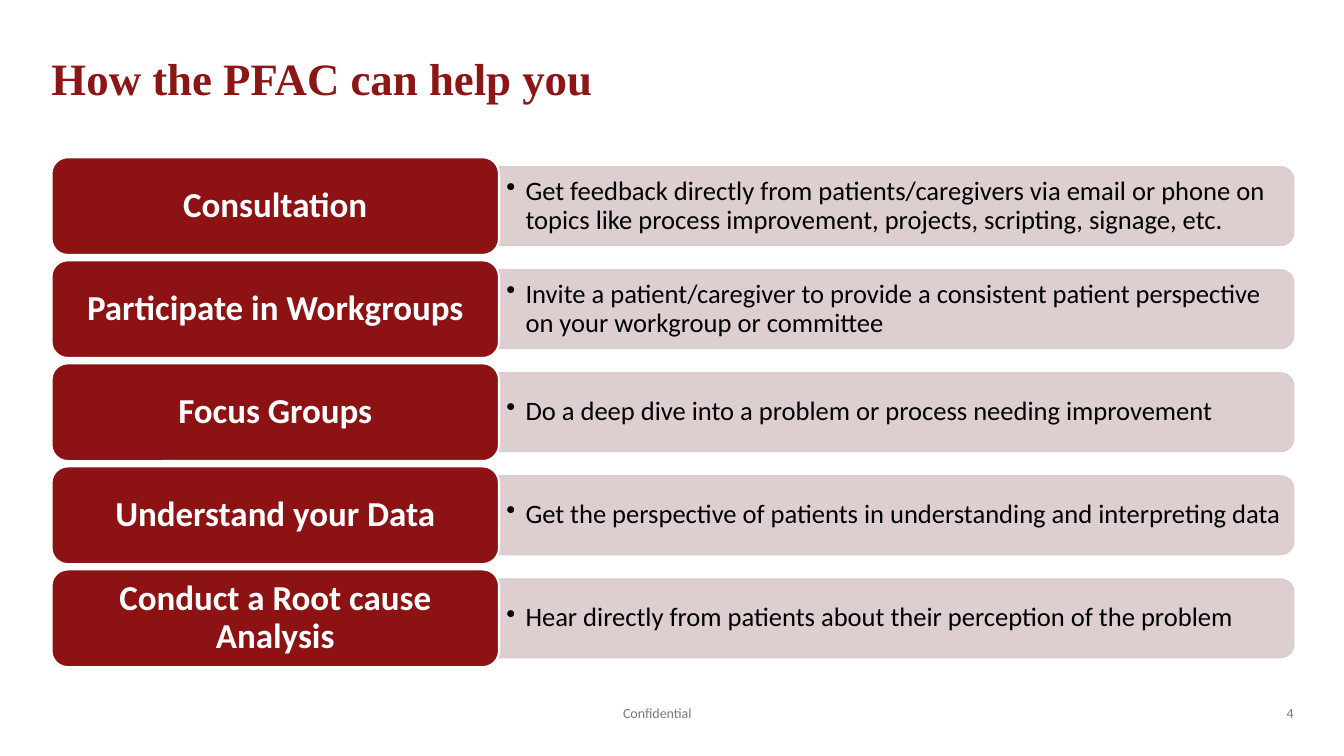
"""Build the slide that lists five ways the PFAC can help."""
from dataclasses import dataclass

import lxml.etree
import pptx
import pptx.dml.color
import pptx.dml.fill
import pptx.enum.shapes
import pptx.enum.text
import pptx.oxml.ns
import pptx.presentation
import pptx.shapes.autoshape
import pptx.slide
import pptx.text.text
import pptx.util

SLIDE_WIDTH = pptx.util.Inches(13.33)
SLIDE_HEIGHT = pptx.util.Inches(7.5)
COLOURS = {
    "title": "8C1515",
    "label": "8C1213",
    "bar": "DACACA",
    "white": "FFFFFF",
    "black": "000000",
    "footer": "7F7776",
}
ALIGN = pptx.enum.text.PP_ALIGN
ANCHOR = pptx.enum.text.MSO_ANCHOR
SHAPE = pptx.enum.shapes.MSO_SHAPE
CORNER = 0.167


@dataclass(frozen=True)
class Area:
    """A rectangle in percent of the slide's width and height."""

    left: float
    top: float
    width: float
    height: float

    def lengths(self) -> tuple[int, int, int, int]:
        """Return left, top, width and height in EMU."""
        return (
            round(SLIDE_WIDTH * self.left / 100),
            round(SLIDE_HEIGHT * self.top / 100),
            round(SLIDE_WIDTH * self.width / 100),
            round(SLIDE_HEIGHT * self.height / 100),
        )


@dataclass(frozen=True)
class Style:
    """The look of one kind of text."""

    size: float
    colour: str
    align: pptx.enum.text.PP_ALIGN
    anchor: pptx.enum.text.MSO_ANCHOR
    insets: tuple[float, float, float, float] = (0, 0, 0, 0)
    font: str = "Calibri"
    bold: bool = False
    spacing: float = 1.0


@dataclass(frozen=True)
class Service:
    """One row: a label and its explanation."""

    label: str
    detail: str


@dataclass(frozen=True)
class Footer:
    """A small text at the foot of the slide."""

    text: str
    area: Area
    align: pptx.enum.text.PP_ALIGN


SERVICES = [
    Service("Consultation", "Get feedback directly from patients/caregivers via email or phone on "
            "topics like process improvement, projects, scripting, signage, etc."),
    Service("Participate in Workgroups", "Invite a patient/caregiver to provide a consistent "
            "patient perspective on your workgroup or committee"),
    Service("Focus Groups", "Do a deep dive into a problem or process needing improvement"),
    Service("Understand your Data",
            "Get the perspective of patients in understanding and interpreting data"),
    Service("Conduct a Root cause Analysis",
            "Hear directly from patients about their perception of the problem"),
]
FOOTERS = [
    Footer("4", Area(93.1, 92.5, 3.15, 2.85), ALIGN.RIGHT),
    Footer("Confidential", Area(33.16, 92.5, 31.5, 2.9), ALIGN.CENTER),
]
TITLE_AREA = Area(3.83, 6, 92.42, 14.8)
ROW_TOP, ROW_PITCH, LABEL_HEIGHT, BAR_HEIGHT = 20.8, 13.63, 12.93, 10.4
LABEL_LEFT, LABEL_WIDTH = 3.83, 33.3
BAR_LEFT, BAR_WIDTH, DETAIL_WIDTH = 37.08, 59.18, 58.88

TITLE_STYLE = Style(32, "title", ALIGN.LEFT, ANCHOR.TOP, (0, 0.05, 1.5, 0),
                    font="Times New Roman", bold=True)
LABEL_STYLE = Style(25, "white", ALIGN.CENTER, ANCHOR.MIDDLE, (0.1, 0.05, 0.1, 0.05),
                    bold=True, spacing=0.9)
DETAIL_STYLE = Style(19, "black", ALIGN.LEFT, ANCHOR.MIDDLE, (0.08, 0.04, 0.08, 0.04),
                     spacing=0.9)


def colour(name: str) -> pptx.dml.color.RGBColor:
    """Look up a named colour."""
    return pptx.dml.color.RGBColor.from_string(COLOURS[name])


def write(frame: pptx.text.text.TextFrame, text: str, style: Style) -> pptx.text.text._Paragraph:
    """Write one styled paragraph into a text frame."""
    frame.word_wrap = True
    frame.auto_size = pptx.enum.text.MSO_AUTO_SIZE.NONE
    frame.vertical_anchor = style.anchor
    (frame.margin_left, frame.margin_top, frame.margin_right, frame.margin_bottom) = (
        pptx.util.Inches(inset) for inset in style.insets)
    para = frame.paragraphs[0]
    para.alignment = style.align
    para.line_spacing = style.spacing
    span = para.add_run()
    span.text = text
    span.font.name = style.font
    span.font.size = pptx.util.Pt(style.size)
    span.font.bold = style.bold
    span.font.color.rgb = colour(style.colour)
    return para


def add_bullet(para: pptx.text.text._Paragraph) -> None:
    """Give a paragraph a hanging round bullet."""
    properties = para._p.get_or_add_pPr()
    indent = pptx.util.Inches(0.19)
    properties.set("marL", str(indent))
    properties.set("indent", str(-indent))
    bullet = lxml.etree.SubElement(properties, pptx.oxml.ns.qn("a:buChar"))
    bullet.set("char", "•")


def add_panel(page: pptx.slide.Slide, preset: pptx.enum.shapes.MSO_SHAPE,
              lengths: tuple[int, int, int, int], fill: str, line: str,
              line_width: float) -> pptx.shapes.autoshape.Shape:
    """Draw a filled, outlined panel with rounded corners."""
    panel = page.shapes.add_shape(preset, *lengths)
    panel.shadow.inherit = False
    panel.adjustments[0] = CORNER
    panel.fill.solid()
    panel.fill.fore_color.rgb = colour(fill)
    panel.line.color.rgb = colour(line)
    panel.line.width = pptx.util.Pt(line_width)
    return panel


def add_bar(page: pptx.slide.Slide, area: Area) -> None:
    """Draw a translucent bar rounded at its right end."""
    left, top, width, height = area.lengths()
    upright = (left + (width - height) // 2, top + (height - width) // 2, height, width)
    bar = add_panel(page, SHAPE.ROUND_2_SAME_RECTANGLE, upright, "bar", "bar", 1)
    bar.rotation = 90
    for tint in bar._element.spPr.iter(pptx.oxml.ns.qn("a:srgbClr")):
        lxml.etree.SubElement(tint, pptx.oxml.ns.qn("a:alpha")).set("val", "90000")


def add_service(page: pptx.slide.Slide, service: Service, row: int) -> None:
    """Draw one row of the list."""
    top = ROW_TOP + row * ROW_PITCH
    bar_top = top + (LABEL_HEIGHT - BAR_HEIGHT) / 2
    add_bar(page, Area(BAR_LEFT, bar_top, BAR_WIDTH, BAR_HEIGHT))
    box = page.shapes.add_textbox(*Area(BAR_LEFT, bar_top, DETAIL_WIDTH, BAR_HEIGHT).lengths())
    add_bullet(write(box.text_frame, service.detail, DETAIL_STYLE))
    label_area = Area(LABEL_LEFT, top, LABEL_WIDTH, LABEL_HEIGHT)
    label = add_panel(page, SHAPE.ROUNDED_RECTANGLE, label_area.lengths(), "label", "white", 1.5)
    write(label.text_frame, service.label, LABEL_STYLE)


def main() -> None:
    """Build and save the deck."""
    deck = pptx.Presentation()
    deck.slide_width, deck.slide_height = SLIDE_WIDTH, SLIDE_HEIGHT
    page = deck.slides.add_slide(deck.slide_layouts.get_by_name("Title Only"))
    title = page.shapes.title
    title.left, title.top, title.width, title.height = TITLE_AREA.lengths()
    write(title.text_frame, "How the PFAC can help you", TITLE_STYLE)
    for footer in FOOTERS:
        box = page.shapes.add_textbox(*footer.area.lengths())
        write(box.text_frame, footer.text, Style(10, "footer", footer.align, ANCHOR.BOTTOM))
    for row, service in enumerate(SERVICES):
        add_service(page, service, row)
    deck.save("out.pptx")


if __name__ == "__main__":
    main()
